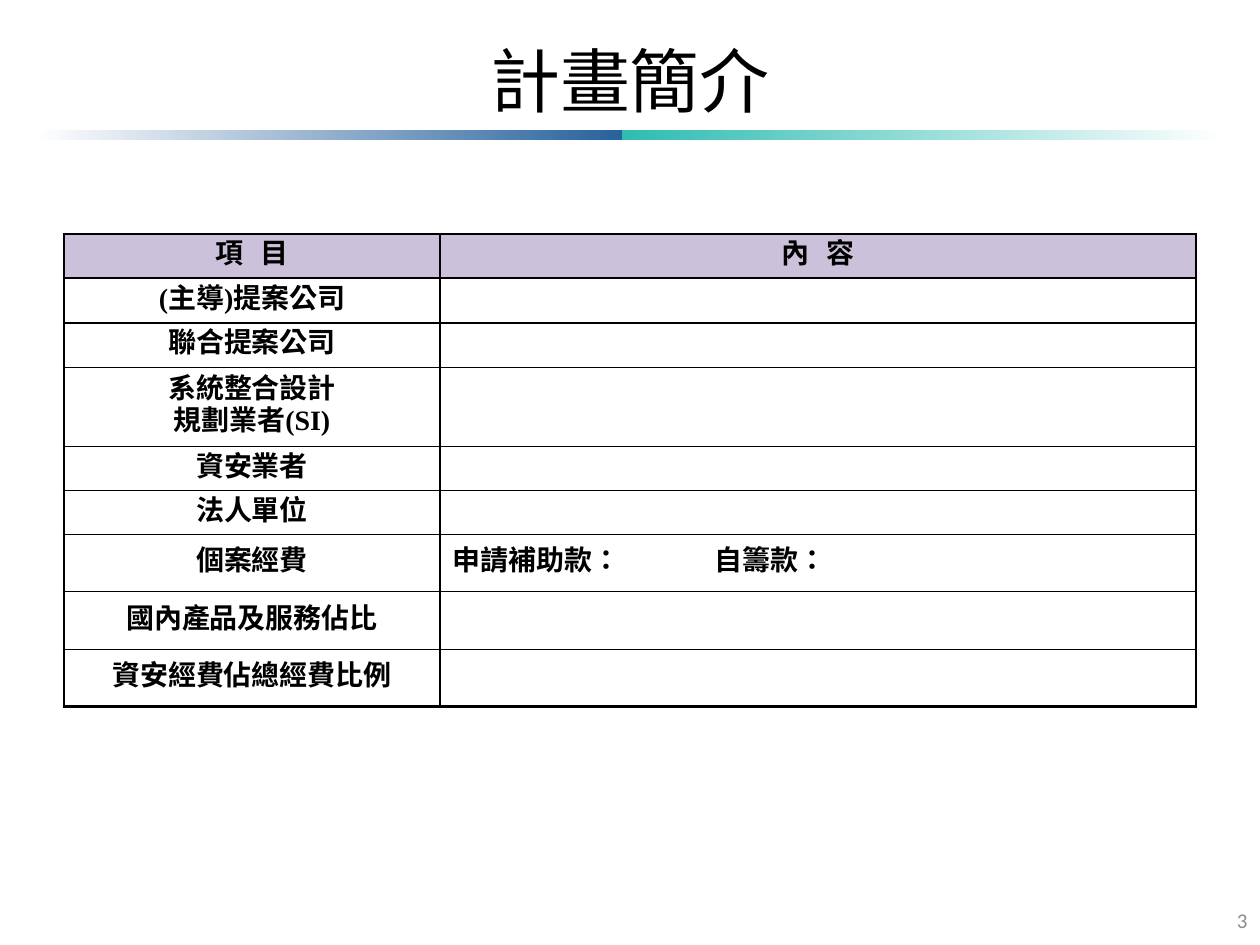
from dataclasses import dataclass

import lxml.etree
import pptx
import pptx.dml.color
import pptx.enum.shapes
import pptx.enum.text
import pptx.oxml.ns
import pptx.util

PX = 914400 / 126
BLACK = pptx.dml.color.RGBColor(0x00, 0x00, 0x00)
WHITE = pptx.dml.color.RGBColor(0xFF, 0xFF, 0xFF)
BLUE = pptx.dml.color.RGBColor(0x28, 0x62, 0x9C)
TEAL = pptx.dml.color.RGBColor(0x2F, 0xBC, 0xB2)
LILAC = pptx.dml.color.RGBColor(0xCC, 0xC1, 0xDA)
GREY = pptx.dml.color.RGBColor(0x8C, 0x8C, 0x8C)

ALIGN = pptx.enum.text.PP_ALIGN
ANCHOR = pptx.enum.text.MSO_ANCHOR
TITLE_FONT = {"name": "Times New Roman", "size": pptx.util.Pt(40), "bold": False}
CELL_FONT = {"name": "Times New Roman", "size": pptx.util.Pt(16), "bold": True}
NUMBER_FONT = {"name": "Calibri", "size": pptx.util.Pt(12)}
LANGUAGE = "zh-TW"
HEADER_SPACING = 1000  # hundredths of a point
EMPTY_SIZE = 1400  # hundredths of a point, keeps empty cells within their row
FUNDING_TAB = 262


@dataclass
class Bar:
    left: int
    width: int
    start: pptx.dml.color.RGBColor
    end: pptx.dml.color.RGBColor


@dataclass
class Row:
    height: int
    item: str
    content: str = ""


BARS = [Bar(35, 587, WHITE, BLUE), Bar(622, 603, TEAL, WHITE)]
COLUMNS = [376, 756]
ROWS = [
    Row(44, "項目", "內容"),
    Row(45, "(主導)提案公司"),
    Row(44, "聯合提案公司"),
    Row(79, "系統整合設計\n規劃業者(SI)"),
    Row(44, "資安業者"),
    Row(44, "法人單位"),
    Row(57, "個案經費", "申請補助款：\t自籌款："),
    Row(58, "國內產品及服務佔比"),
    Row(57, "資安經費佔總經費比例"),
]


def px(length: int) -> int:
    return round(length * PX)


def format_font(font, values: dict, color) -> None:
    for name, value in values.items():
        setattr(font, name, value)
    font.color.rgb = color


def place(shape, left: int, top: int, width: int, height: int) -> None:
    shape.left, shape.top = px(left), px(top)
    shape.width, shape.height = px(width), px(height)


def add_child(parent, tag: str, **attributes: str):
    return lxml.etree.SubElement(parent, pptx.oxml.ns.qn(tag), attributes)


def draw_bar(page, bar: Bar) -> None:
    box = page.shapes.add_shape(pptx.enum.shapes.MSO_SHAPE.RECTANGLE,
                                px(bar.left), px(130), px(bar.width), px(10))
    box.shadow.inherit = False
    box.line.fill.background()
    box.fill.gradient()
    box.fill.gradient_angle = 0
    for stop, color in zip(box.fill.gradient_stops, (bar.start, bar.end)):
        stop.color.rgb = color


def draw_borders(cell, widths: dict) -> None:
    properties = cell._tc.get_or_add_tcPr()
    for side, width in widths.items():
        line = add_child(properties, f"a:ln{side}", w=str(pptx.util.Pt(width)))
        fill = add_child(line, "a:solidFill")
        add_child(fill, "a:srgbClr", val=str(BLACK))


def write_cell(cell, text: str, header: bool, centred: bool) -> None:
    cell.vertical_anchor = ANCHOR.TOP if header else ANCHOR.MIDDLE
    frame = cell.text_frame
    if not text:
        add_child(frame.paragraphs[0]._p, "a:endParaRPr", lang=LANGUAGE, sz=str(EMPTY_SIZE))
        return
    for index, line in enumerate(text.split("\n")):
        para = frame.paragraphs[0] if index == 0 else frame.add_paragraph()
        para.alignment = ALIGN.CENTER if centred else ALIGN.LEFT
        para.line_spacing = pptx.util.Pt(18)
        if "\t" in line:
            tabs = add_child(para._p.get_or_add_pPr(), "a:tabLst")
            add_child(tabs, "a:tab", pos=str(px(FUNDING_TAB)), algn="l")
        # Header letters are spread apart, the last one without trailing space
        for position, piece in enumerate(line if header else [line]):
            span = para.add_run()
            span.text = piece
            format_font(span.font, CELL_FONT, BLACK)
            span.font._element.set("lang", LANGUAGE)
            if header and position < len(line) - 1:
                span.font._element.set("spc", str(HEADER_SPACING))


def draw_table(page) -> None:
    frame = page.shapes.add_table(len(ROWS), len(COLUMNS), px(64), px(234),
                                  px(sum(COLUMNS)), px(sum(row.height for row in ROWS)))
    table = frame.table
    table.first_row = table.horz_banding = False
    for column, width in zip(table.columns, COLUMNS):
        column.width = px(width)
    last_row, last_column = len(ROWS) - 1, len(COLUMNS) - 1
    for r, row in enumerate(ROWS):
        table.rows[r].height = px(row.height)
        for c, text in enumerate((row.item, row.content)):
            cell = table.cell(r, c)
            write_cell(cell, text, header=r == 0, centred=r == 0 or c == 0)
            outer = {"L": c == 0, "R": c == last_column, "T": r == 0, "B": r == last_row}
            draw_borders(cell, {side: 1.5 if edge else 1 for side, edge in outer.items()})
            cell.fill.solid()
            cell.fill.fore_color.rgb = LILAC if r == 0 else WHITE


def main() -> None:
    deck = pptx.Presentation()
    deck.slide_width, deck.slide_height = px(1260), px(945)
    page = deck.slides.add_slide(deck.slide_layouts[5])

    # Two-colour rule under the title
    for bar in BARS:
        draw_bar(page, bar)

    # Title
    title = page.shapes.title
    place(title, 63, 16, 1134, 127)
    title.text_frame.text = "計畫簡介"
    title.text_frame.vertical_anchor = ANCHOR.MIDDLE
    title.text_frame.paragraphs[0].alignment = ALIGN.CENTER
    format_font(title.text_frame.paragraphs[0].runs[0].font, TITLE_FONT, BLACK)

    # Project summary
    draw_table(page)

    # Page number
    number = page.shapes.add_textbox(px(966), px(895), px(294), px(50))
    number.text_frame.word_wrap = True
    number.text_frame.vertical_anchor = ANCHOR.MIDDLE
    para = number.text_frame.paragraphs[0]
    para.alignment = ALIGN.RIGHT
    span = para.add_run()
    span.text = "3"
    format_font(span.font, NUMBER_FONT, GREY)

    deck.save("out.pptx")


if __name__ == "__main__":
    main()
